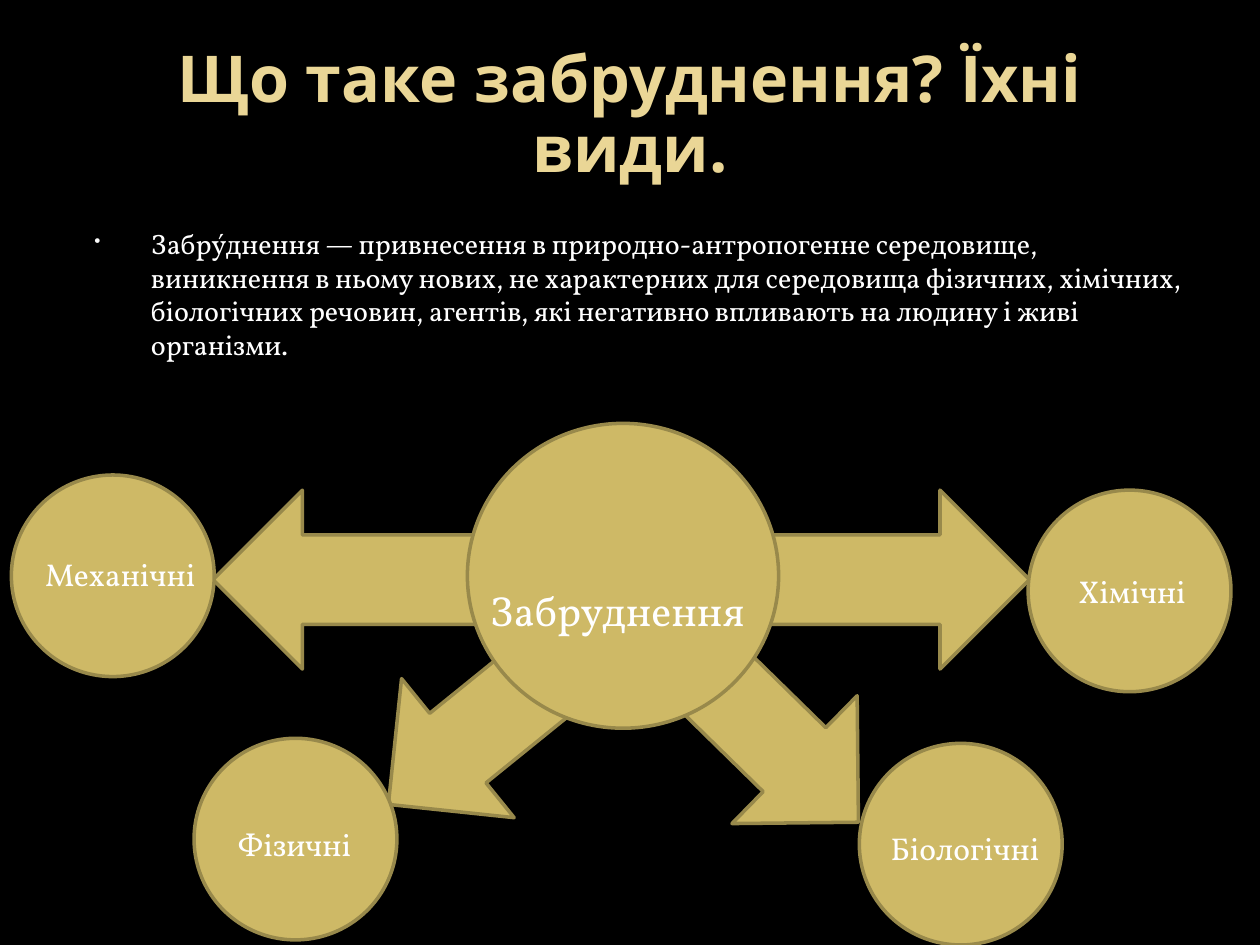
"""Build a slide that defines pollution and shows its four kinds around a hub."""
from lxml import etree
from pptx import Presentation
from pptx import util as u
from pptx.dml.color import RGBColor
from pptx.enum import shapes, text
from pptx.oxml import ns

colour = RGBColor.from_string
presentation = Presentation()
presentation.slide_width, presentation.slide_height = u.Inches(10), u.Inches(7.5)
column = presentation.slide_width / 10
row = presentation.slide_height / 7.5
slide = presentation.slides.add_slide(presentation.slide_layouts[5])
slide.background.fill.solid()
slide.background.fill.fore_color.rgb = colour("000000")


def add_gold_shape(kind, left, top, width, height, rotation=0):
    shape = slide.shapes.add_shape(
        kind, int(left * column), int(top * row), int(width * column), int(height * row))
    shape.rotation = rotation
    shape.shadow.inherit = False
    shape.fill.solid()
    shape.fill.fore_color.rgb = colour("CEB966")
    shape.line.color.rgb = colour("98894B")
    shape.line.width = u.Pt(2)


def add_text(wording, left, top, width, height, size):
    box = slide.shapes.add_textbox(
        int(left * column), int(top * row), int(width * column), int(height * row))
    box.text_frame.word_wrap = True
    paragraph = box.text_frame.paragraphs[0]
    paragraph.text = wording
    paragraph.font.name = "Vollkorn"
    paragraph.font.size = u.Pt(size)
    paragraph.font.color.rgb = colour("FFFFFF")
    return paragraph


title = slide.shapes.title
title.left, title.top = int(0.5 * column), int(0.3 * row)
title.width, title.height = int(9 * column), int(1.25 * row)
frame = title.text_frame
frame.word_wrap = True
frame.auto_size = text.MSO_AUTO_SIZE.NONE
frame.vertical_anchor = text.MSO_ANCHOR.MIDDLE
frame.margin_left = frame.margin_right = u.Inches(0.2)
heading = frame.paragraphs[0]
heading.text = "Що таке забруднення? Їхні види."
heading.alignment = text.PP_ALIGN.CENTER
heading.line_spacing = 0.9
heading.font.name = "Open Sans"
heading.font.size = u.Pt(36.9)
heading.font.bold = True
heading.font.color.rgb = colour("EAD696")

definition = add_text(
    "Забру́днення — привнесення в природно-антропогенне середовище, виникнення в ньому "
    "нових, не характерних для середовища фізичних, хімічних, біологічних речовин, агентів, "
    "які негативно впливають на людину і живі організми.",
    0.5, 1.75, 9, 1.13, 16)
definition.space_before = u.Pt(3.2)
properties = definition._p.get_or_add_pPr()
properties.set("marL", str(u.Inches(0.6)))
properties.set("indent", str(u.Inches(-0.45)))
bullet_colour = etree.Element(ns.qn("a:buClr"))
etree.SubElement(bullet_colour, ns.qn("a:srgbClr"), val="F9F9F9")
bullet_size = etree.Element(ns.qn("a:buSzPct"), val="65000")
bullet = etree.Element(ns.qn("a:buChar"), char="•")
default_run = properties.find(ns.qn("a:defRPr"))
for element in (bullet_colour, bullet_size, bullet):
    default_run.addprevious(element)

for left, top, width, rotation in (
        (5.33, 5.21, 1.73, 224.4), (2.89, 5.13, 1.73, 321),
        (6.11, 3.89, 2.06, 180), (1.69, 3.89, 2.14, 0)):
    add_gold_shape(shapes.MSO_SHAPE.LEFT_ARROW, left, top, width, 1.42, rotation)

add_gold_shape(shapes.MSO_SHAPE.OVAL, 3.71, 3.36, 2.47, 2.42)
add_text("Забруднення", 3.79, 4.59, 2.31, 0.5, 24)

for kind, left, top, label_left, label_top in (
        ("Механічні", 0.09, 3.77, 0.26, 4.36), ("Хімічні", 8.16, 3.89, 8.46, 4.49),
        ("Фізичні", 1.54, 5.86, 1.79, 6.5), ("Біологічні", 6.82, 5.9, 6.97, 6.53)):
    add_gold_shape(shapes.MSO_SHAPE.OVAL, left, top, 1.61, 1.6)
    add_text(kind, label_left, label_top, 1.5, 0.4, 18)

presentation.save("out.pptx")
